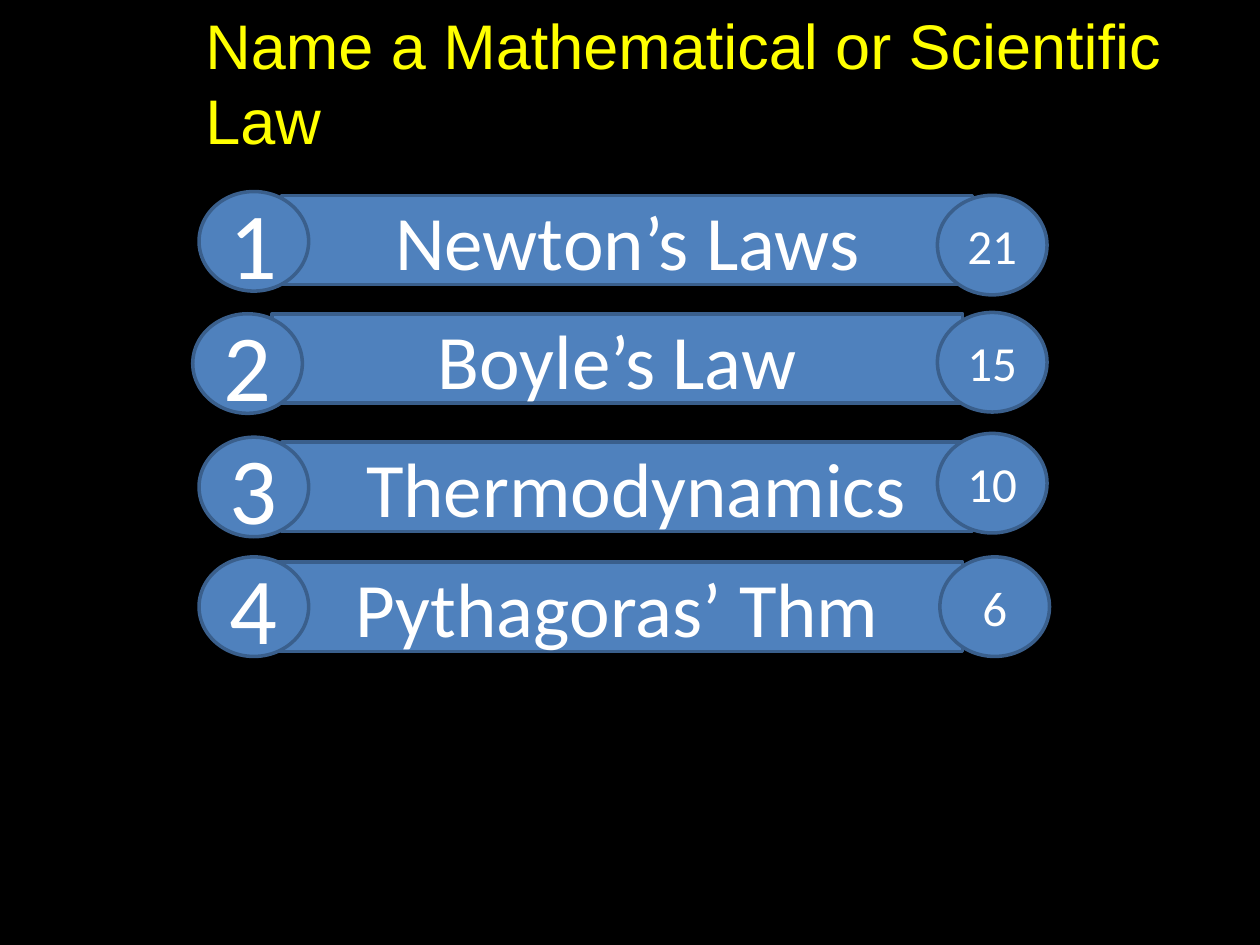
import pptx
import pptx.util
import pptx.dml.color
import pptx.enum.shapes
import pptx.enum.text

Inches = pptx.util.Inches
Pt = pptx.util.Pt
RGBColor = pptx.dml.color.RGBColor
MSO_SHAPE = pptx.enum.shapes.MSO_SHAPE
PP_ALIGN = pptx.enum.text.PP_ALIGN
MSO_ANCHOR = pptx.enum.text.MSO_ANCHOR

BLACK = RGBColor(0x00, 0x00, 0x00)
YELLOW = RGBColor(0xFF, 0xFF, 0x00)
WHITE = RGBColor(0xFF, 0xFF, 0xFF)
BLUE = RGBColor(0x4F, 0x81, 0xBD)
DARK_BLUE = RGBColor(0x3A, 0x5F, 0x8C)

BAR_SIZE = (5.48, 0.71)
DISC_SIZE = (0.87, 0.79)

ANSWERS = [
    ("Newton’s Laws", 21, (2.24, 1.55), (1.58, 1.52), (7.44, 1.55)),
    ("Boyle’s Law", 15, (2.16, 2.49), (1.53, 2.49), (7.44, 2.48)),
    (" Thermodynamics", 10, (2.24, 3.51), (1.58, 3.47), (7.44, 3.44)),
    ("Pythagoras’ Thm", 6, (2.16, 4.46), (1.58, 4.42), (7.46, 4.42)),
]


def style_text(p, text, font, size, color, align):
    p.text = text
    p.alignment = align
    p.font.name = font
    p.font.size = Pt(size)
    p.font.color.rgb = color


def add_title(s, left, top, width, height):
    sp = s.shapes.title
    sp.left, sp.top = Inches(left), Inches(top)
    sp.width, sp.height = Inches(width), Inches(height)
    tf = sp.text_frame
    tf.word_wrap = True
    tf.auto_size = pptx.enum.text.MSO_AUTO_SIZE.NONE
    tf.vertical_anchor = MSO_ANCHOR.MIDDLE
    style_text(tf.paragraphs[0], "Name a Mathematical or Scientific Law",
               "Arial", 36, YELLOW, PP_ALIGN.LEFT)


def add_block(s, kind, position, size, text, font_size):
    sp = s.shapes.add_shape(kind, *(Inches(v) for v in position + size))
    sp.shadow.inherit = False
    sp.fill.solid()
    sp.fill.fore_color.rgb = BLUE
    sp.line.color.rgb = DARK_BLUE
    sp.line.width = Pt(2)
    tf = sp.text_frame
    tf.word_wrap = True
    tf.vertical_anchor = MSO_ANCHOR.MIDDLE
    style_text(tf.paragraphs[0], text, "Calibri", font_size, WHITE, PP_ALIGN.CENTER)


def add_answer(s, rank, answer, score, bar_at, rank_at, score_at):
    add_block(s, MSO_SHAPE.RECTANGLE, bar_at, BAR_SIZE, answer, 44)
    add_block(s, MSO_SHAPE.OVAL, rank_at, DISC_SIZE, str(rank), 54)
    add_block(s, MSO_SHAPE.OVAL, score_at, DISC_SIZE, str(score), 28)


def main():
    prs = pptx.Presentation()
    prs.slide_width, prs.slide_height = Inches(10), Inches(7.5)
    s = prs.slides.add_slide(prs.slide_layouts[5])
    s.background.fill.solid()
    s.background.fill.fore_color.rgb = BLACK
    add_title(s, 1.53, 0, 8.19, 1.3)
    for rank, answer in enumerate(ANSWERS, start=1):
        add_answer(s, rank, *answer)
    prs.save("out.pptx")


if __name__ == "__main__":
    main()
